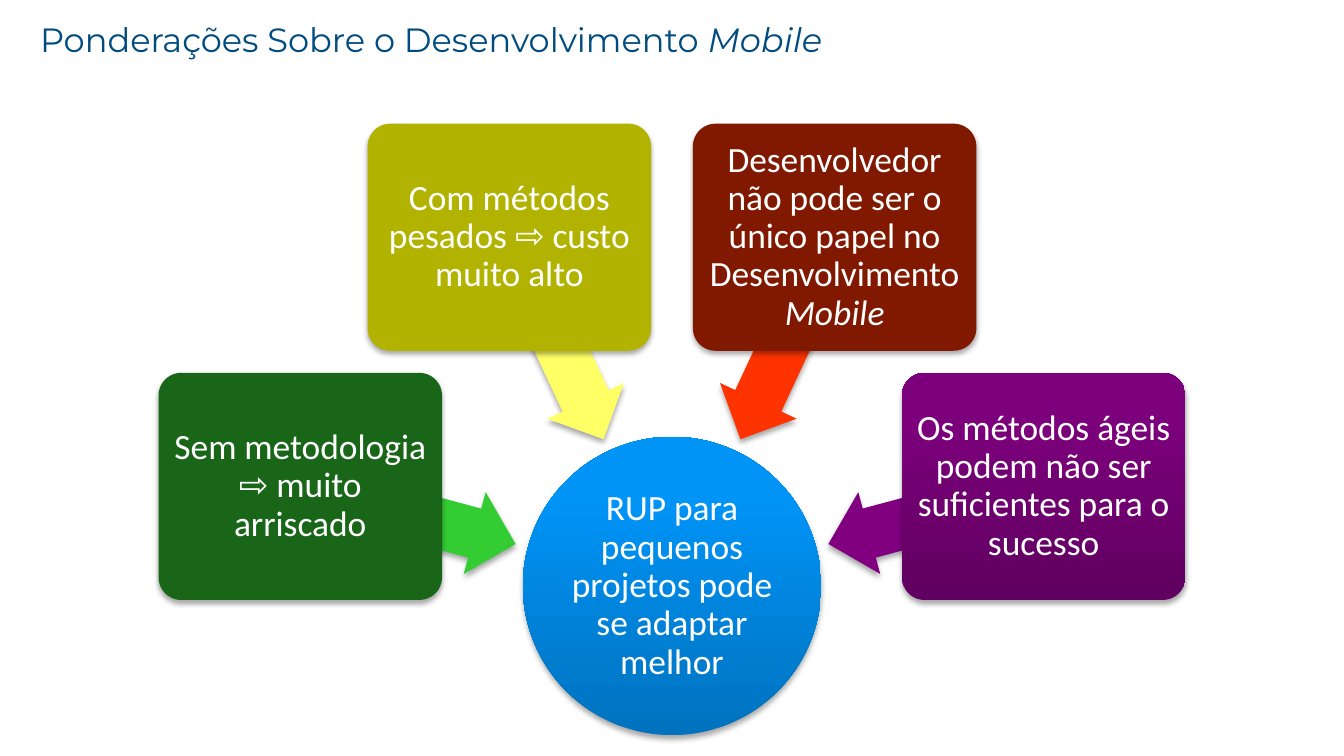
from math import cos, radians, sin
from lxml.etree import SubElement
from pptx import Presentation
from pptx.dml.color import RGBColor
from pptx.enum.shapes import MSO_SHAPE
from pptx.enum.text import MSO_ANCHOR, PP_ALIGN
from pptx.oxml.ns import qn
from pptx.util import Inches, Pt

THEME = {
    "title": "004C80", "text": "FFFFFF", "shadow": "000000",
    "head": "Montserrat", "body": "Calibri", "head_size": 18, "body_size": 19,
    "hub": ["0072BE", "0094F7"],
}
# Angle around the hub, arrow colour, box colours, text, italic ending
SPOKES = [
    (195, "33CC33", ["196619"], "Sem metodologia ⇨ muito arriscado", ""),
    (245, "FFFF66", ["B2B200"], "Com métodos pesados ⇨ custo muito alto", ""),
    (295, "FF3300", ["801900"],
     "Desenvolvedor não pode ser o único papel no Desenvolvimento ", "Mobile"),
    (345, "800080", ["600060", "7C007C"],
     "Os métodos ágeis podem não ser suficientes para o sucesso", ""),
]

deck = Presentation()
deck.slide_width = Inches(10)
deck.slide_height = deck.slide_width * 9 // 16
slide = deck.slides.add_slide(deck.slide_layouts[6])
COL = deck.slide_width / 100
HUB_X, HUB_Y = 50, 43.6
ARROW_R, BOX_R = 20.3, 28.63


def draw(kind, angle, radius, width, height, colors):
    """Centre a shape on the hub's polar grid; two colours make a gradient."""
    x = HUB_X + radius * cos(radians(angle)) - width / 2
    y = HUB_Y + radius * sin(radians(angle)) - height / 2
    shape = slide.shapes.add_shape(
        kind, *(round(n * COL) for n in (x, y, width, height)))
    shape.line.fill.background()
    if len(colors) == 1:
        shape.fill.solid()
        shape.fill.fore_color.rgb = RGBColor.from_string(colors[0])
    else:
        shape.fill.gradient()
        shape.fill.gradient_angle = 90
        for stop, color, place in zip(shape.fill.gradient_stops, colors, (0, 0.8)):
            stop.color.rgb = RGBColor.from_string(color)
            stop.position = place
    shape.shadow.inherit = False
    effects = shape.element.spPr.find(qn("a:effectLst"))
    shade = SubElement(effects, qn("a:outerShdw"), blurRad=str(Pt(3.1)),
                       dist=str(Pt(1.8)), dir="5400000", rotWithShape="0")
    tint = SubElement(shade, qn("a:srgbClr"), val=THEME["shadow"])
    SubElement(tint, qn("a:alpha"), val="35000")
    return shape


def write(shape, text, ending, font, size, color, margin):
    frame = shape.text_frame
    frame.word_wrap = True
    frame.vertical_anchor = MSO_ANCHOR.MIDDLE
    frame.margin_left = frame.margin_right = round(margin * COL)
    frame.margin_top = frame.margin_bottom = round(margin * COL)
    frame.text = text
    line = frame.paragraphs[0]
    if ending:
        line.add_run().text = ending
        line.runs[1].font.italic = True
    for run in line.runs:
        run.font.name = font
        run.font.size = Pt(size)
        run.font.color.rgb = RGBColor.from_string(color)
    return line


title = slide.shapes.add_textbox(
    *(round(n * COL) for n in (2, 1.15, 82.7, 3.5)))
write(title, "Ponderações Sobre o Desenvolvimento ", "Mobile",
      THEME["head"], THEME["head_size"], THEME["title"], 1)

hub = draw(MSO_SHAPE.OVAL, 0, 0, 22.2, 22.2, THEME["hub"])
labels = [(hub, "RUP para pequenos projetos pode se adaptar melhor", "", 0.1)]

for angle, tone, colors, text, ending in SPOKES:
    arrow = draw(MSO_SHAPE.LEFT_ARROW, angle, ARROW_R, 16.5, 6.3, [tone])
    arrow.rotation = angle
    arrow.adjustments[0], arrow.adjustments[1] = 0.6, 0.5
    box = draw(MSO_SHAPE.ROUNDED_RECTANGLE, angle, BOX_R, 21.1, 16.9, colors)
    box.adjustments[0] = 0.1
    labels.append((box, text, ending, 0.4))

for shape, text, ending, margin in labels:
    line = write(shape, text, ending, THEME["body"], THEME["body_size"],
                 THEME["text"], margin)
    line.alignment = PP_ALIGN.CENTER
    line.line_spacing = 0.9

deck.save("out.pptx")
